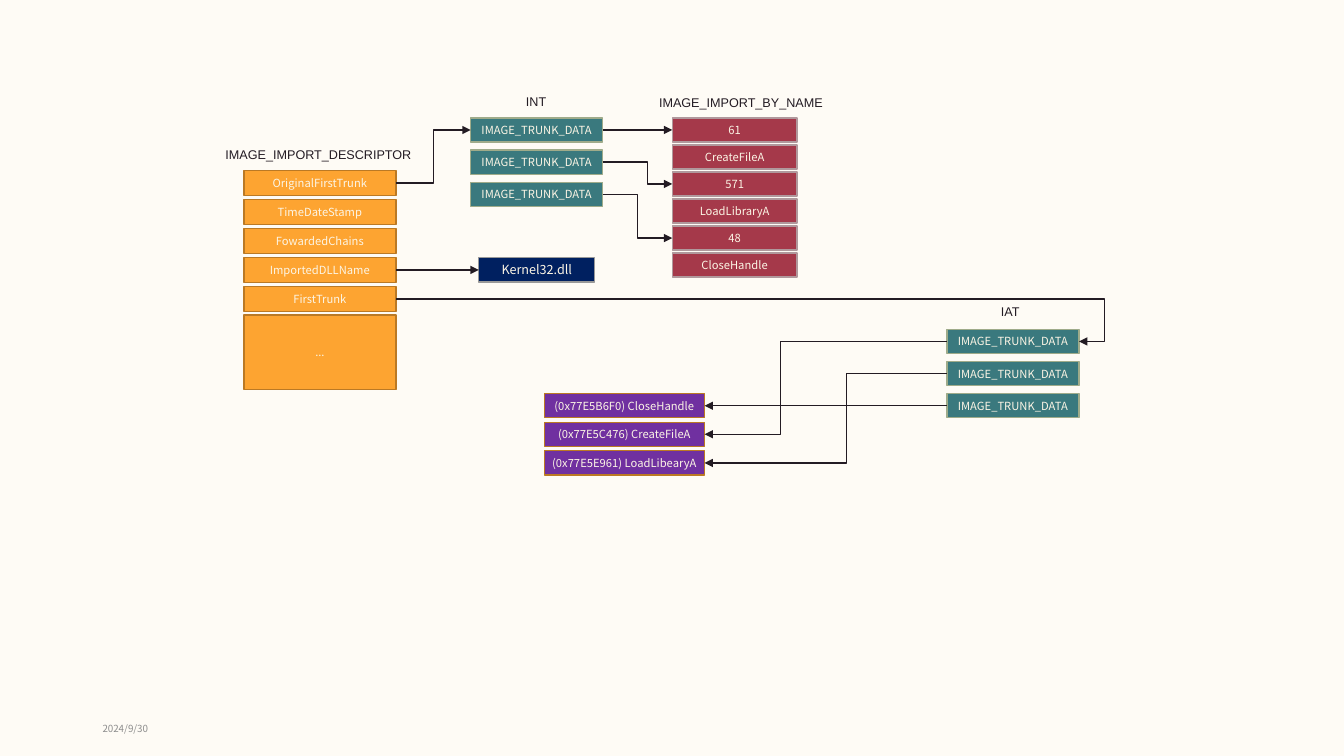
import lxml.etree
import pptx
import pptx.dml.color
import pptx.enum.shapes
import pptx.enum.text
import pptx.oxml.ns
import pptx.util

Pt = pptx.util.Pt
RGBColor = pptx.dml.color.RGBColor

BACKGROUND = RGBColor(0xFE, 0xFB, 0xF5)
INK = RGBColor(0x23, 0x1B, 0x23)
CREAM = RGBColor(0xFC, 0xF5, 0xE5)
GREY = RGBColor(0x8D, 0x8D, 0x8D)
ORANGE = RGBColor(0xFD, 0xA4, 0x31)
BROWN = RGBColor(0xBB, 0x79, 0x24)
TEAL = RGBColor(0x3A, 0x79, 0x7E)
SAGE = RGBColor(0x9F, 0xAB, 0x8A)
RED = RGBColor(0xA5, 0x39, 0x4A)
ROSE = RGBColor(0xB0, 0x98, 0x9C)
NAVY = RGBColor(0x00, 0x20, 0x60)
SILVER = RGBColor(0x99, 0x99, 0x99)
PURPLE = RGBColor(0x70, 0x30, 0xA0)

BOX_FONT = "Noto Sans CJK JP"
ROW_HEIGHT = 17.3
TOP, LEFT, BOTTOM, RIGHT = range(4)


def write_text(frame, text, font_name, size, color):
    frame.text = text
    font = frame.paragraphs[0].runs[0].font
    font.name = font_name
    font.size = Pt(size)
    font.color.rgb = color


def add_label(slide, text, left, top, width, height=18, font_name="Arial", size=9, color=INK):
    label = slide.shapes.add_textbox(Pt(left), Pt(top), Pt(width), Pt(height))
    label.text_frame.vertical_anchor = pptx.enum.text.MSO_ANCHOR.MIDDLE
    write_text(label.text_frame, text, font_name, size, color)


def add_box(slide, text, left, top, width, height, fill, border, size=8):
    box = slide.shapes.add_shape(
        pptx.enum.shapes.MSO_SHAPE.RECTANGLE, Pt(left), Pt(top), Pt(width), Pt(height))
    box.shadow.inherit = False
    box.fill.solid()
    box.fill.fore_color.rgb = fill
    box.line.color.rgb = border
    box.line.width = Pt(1)
    frame = box.text_frame
    frame.word_wrap = True
    frame.margin_left = frame.margin_right = frame.margin_top = frame.margin_bottom = 0
    frame.vertical_anchor = pptx.enum.text.MSO_ANCHOR.MIDDLE
    write_text(frame, text, BOX_FONT, size, CREAM)
    frame.paragraphs[0].alignment = pptx.enum.text.PP_ALIGN.CENTER
    return box


def add_stack(slide, texts, left, top, width, pitch, fill, border, height=ROW_HEIGHT):
    """Place one box per text, each a pitch below the one before."""
    return [add_box(slide, text, left, top + row * pitch, width, height, fill, border)
            for row, text in enumerate(texts)]


def add_arrow(slide, source, target, target_side=LEFT, source_side=RIGHT, bend=None):
    """Join two boxes; bend is the turning point as a share of the width, None for straight."""
    kinds = pptx.enum.shapes.MSO_CONNECTOR
    kind = kinds.STRAIGHT if bend is None else kinds.ELBOW
    arrow = slide.shapes.add_connector(kind, 0, 0, 0, 0)
    arrow.begin_connect(source, source_side)
    arrow.end_connect(target, target_side)
    arrow.line.color.rgb = INK
    arrow.line.width = Pt(1)
    qn = pptx.oxml.ns.qn
    lxml.etree.SubElement(arrow.get_or_add_ln(), qn("a:tailEnd"), type="triangle")
    properties = arrow.element.spPr
    lxml.etree.SubElement(properties, qn("a:effectLst"))
    if bend is not None:
        adjustments = properties.find(qn("a:prstGeom")).find(qn("a:avLst"))
        lxml.etree.SubElement(
            adjustments, qn("a:gd"), name="adj1", fmla=f"val {round(bend * 100000)}")


def main():
    deck = pptx.Presentation()
    deck.slide_width = Pt(960)
    deck.slide_height = Pt(540)
    slide = deck.slides.add_slide(deck.slide_layouts[6])
    slide.background.fill.solid()
    slide.background.fill.fore_color.rgb = BACKGROUND

    fields = ["OriginalFirstTrunk", "TimeDateStamp", "FowardedChains",
              "ImportedDLLName", "FirstTrunk"]
    descriptor = add_stack(slide, fields, 174.2, 121.7, 108.7, 20.7, ORANGE, BROWN, 18)
    add_box(slide, "...", 174.2, 225, 108.7, 53.3, ORANGE, BROWN)
    trunks = ["IMAGE_TRUNK_DATA"] * 3
    name_table = add_stack(slide, trunks, 336.2, 84.2, 94.3, 23, TEAL, SAGE)
    address_table = add_stack(slide, trunks, 676.4, 235.2, 94.3, 23, TEAL, SAGE)
    imports = ["61", "CreateFileA", "571", "LoadLibraryA", "48", "CloseHandle"]
    names = add_stack(slide, imports, 480.2, 84.2, 89.3, 19.3, RED, ROSE)
    functions = ["(0x77E5B6F0) CloseHandle", "(0x77E5C476) CreateFileA",
                 "(0x77E5E961) LoadLibearyA"]
    addresses = add_stack(slide, functions, 388.8, 281.2, 114.5, 20.4, PURPLE, BROWN)
    library = add_box(slide, "Kernel32.dll", 342, 184.15, 82.8, ROW_HEIGHT, NAVY, SILVER, 9)

    add_arrow(slide, descriptor[0], name_table[0], bend=0.5)
    add_arrow(slide, descriptor[3], library)
    add_arrow(slide, descriptor[4], address_table[0], RIGHT, bend=1.037)
    for trunk, name, bend in zip(name_table, names[::2], (None, 0.648, 0.5)):
        add_arrow(slide, trunk, name, bend=bend)
    for trunk, row, bend in zip(address_table, (1, 2, 0), (0.688, 0.415, None)):
        add_arrow(slide, trunk, addresses[row], RIGHT, LEFT, bend)

    add_label(slide, "IMAGE_IMPORT_DESCRIPTOR", 154, 101.5, 150)
    add_label(slide, "INT", 368.6, 63.8, 29.5)
    add_label(slide, "IMAGE_IMPORT_BY_NAME", 463.7, 64.3, 133)
    add_label(slide, "IAT", 707.8, 213.5, 28.8)
    add_label(slide, "2024/9/30", 66.2, 511.2, 216, 18, "Noto Sans CJK SC", 7, GREY)

    deck.save("out.pptx")


if __name__ == "__main__":
    main()
